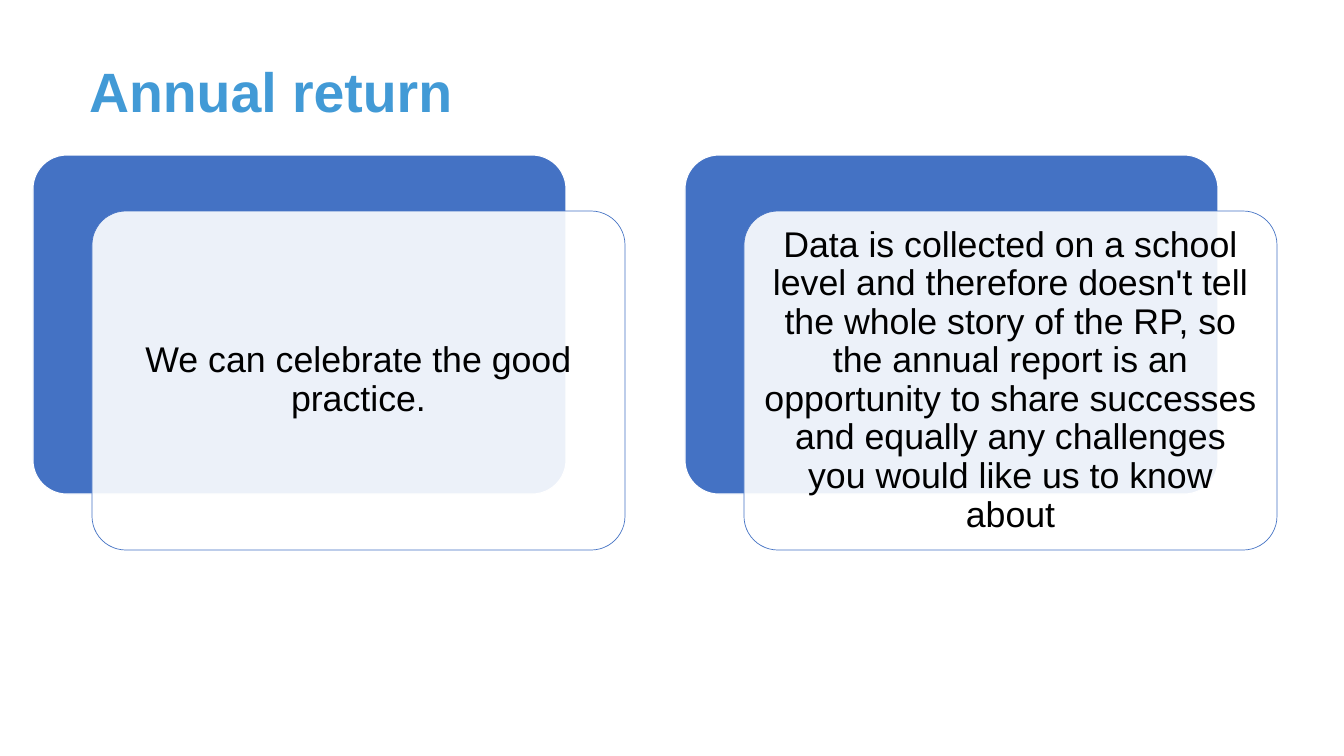
from pptx import Presentation
from pptx.dml.color import RGBColor
from pptx.enum.shapes import MSO_SHAPE as Shape
from pptx.enum.text import MSO_ANCHOR as Anchor, MSO_AUTO_SIZE as AutoSize, PP_ALIGN as Align
from pptx.oxml.ns import qn
from pptx.util import Emu, Pt
from lxml import etree

EMU_PER_PX = 914400 / 50.4
SLIDE_WIDTH, SLIDE_HEIGHT = 1344, 756

CARD_LEFT, CARD_TOP, CARD_PITCH = 33, 155, 652
CARD_WIDTH, CARD_HEIGHT = 533, 339
PANEL_DX, PANEL_DY = 59, 56
MARGIN = 10

MESSAGES = [
    "We can celebrate the good practice.",
    "Data is collected on a school level and therefore doesn't tell the whole "
    "story of the RP, so the annual report is an opportunity to share successes "
    "and equally any challenges you would like us to know about",
]


def px(length):
    return Emu(round(length * EMU_PER_PX))


def color(value):
    return RGBColor.from_string(value)


class SlideBuilder:
    font = "Arial"
    title_color = "429AD6"
    accent = "4472C4"
    white = "FFFFFF"
    black = "000000"

    def __init__(self, slide):
        self.slide = slide

    def set_text(self, box, text, size, text_color, align, anchor, bold=False):
        frame = box.text_frame
        frame.text = text
        frame.word_wrap = True
        frame.auto_size = AutoSize.NONE
        frame.vertical_anchor = anchor
        para = frame.paragraphs[0]
        para.alignment = align
        para.line_spacing = 0.9
        font = para.runs[0].font
        font.name, font.size, font.bold = self.font, Pt(size), bold
        font.color.rgb = color(text_color)
        return frame

    def title(self, text, left, top, width, height):
        box = self.slide.shapes.title
        box.left, box.top, box.width, box.height = map(px, (left, top, width, height))
        frame = self.set_text(box, text, 79.2, self.title_color, Align.LEFT, Anchor.TOP, True)
        frame.margin_top = 0

    def rounded(self, left, top, width, height, fill, line, line_width, opacity=100):
        box = self.slide.shapes.add_shape(
            Shape.ROUNDED_RECTANGLE, *map(px, (left, top, width, height)))
        box.adjustments[0] = 0.1
        box.shadow.inherit = False
        box.fill.solid()
        box.fill.fore_color.rgb = color(fill)
        box.line.color.rgb = color(line)
        box.line.width = Pt(line_width)
        if opacity < 100:
            fill_color = box.element.spPr.find(qn("a:solidFill"))[0]
            etree.SubElement(fill_color, qn("a:alpha"), val=str(opacity * 1000))

    def message(self, text, left, top, width, height):
        box = self.slide.shapes.add_textbox(*map(px, (left, top, width, height)))
        frame = self.set_text(box, text, 51, self.black, Align.CENTER, Anchor.MIDDLE)
        frame.margin_left = frame.margin_right = px(MARGIN)
        frame.margin_top = frame.margin_bottom = px(MARGIN)

    def card(self, text, left, top):
        size = CARD_WIDTH, CARD_HEIGHT
        self.rounded(left, top, *size, self.accent, self.white, 1.5)
        left, top = left + PANEL_DX, top + PANEL_DY
        self.rounded(left, top, *size, self.white, self.accent, 1, opacity=90)
        self.message(text, left + MARGIN, top + MARGIN,
                     CARD_WIDTH - 2 * MARGIN, CARD_HEIGHT - 2 * MARGIN)


def main():
    deck = Presentation()
    deck.slide_width, deck.slide_height = px(SLIDE_WIDTH), px(SLIDE_HEIGHT)
    builder = SlideBuilder(deck.slides.add_slide(deck.slide_layouts[5]))

    # Heading
    builder.title("Annual return", 84, 65, 1176, 95)

    # Layered cards, side by side
    for index, text in enumerate(MESSAGES):
        builder.card(text, CARD_LEFT + index * CARD_PITCH, CARD_TOP)

    deck.save("out.pptx")


if __name__ == "__main__":
    main()
